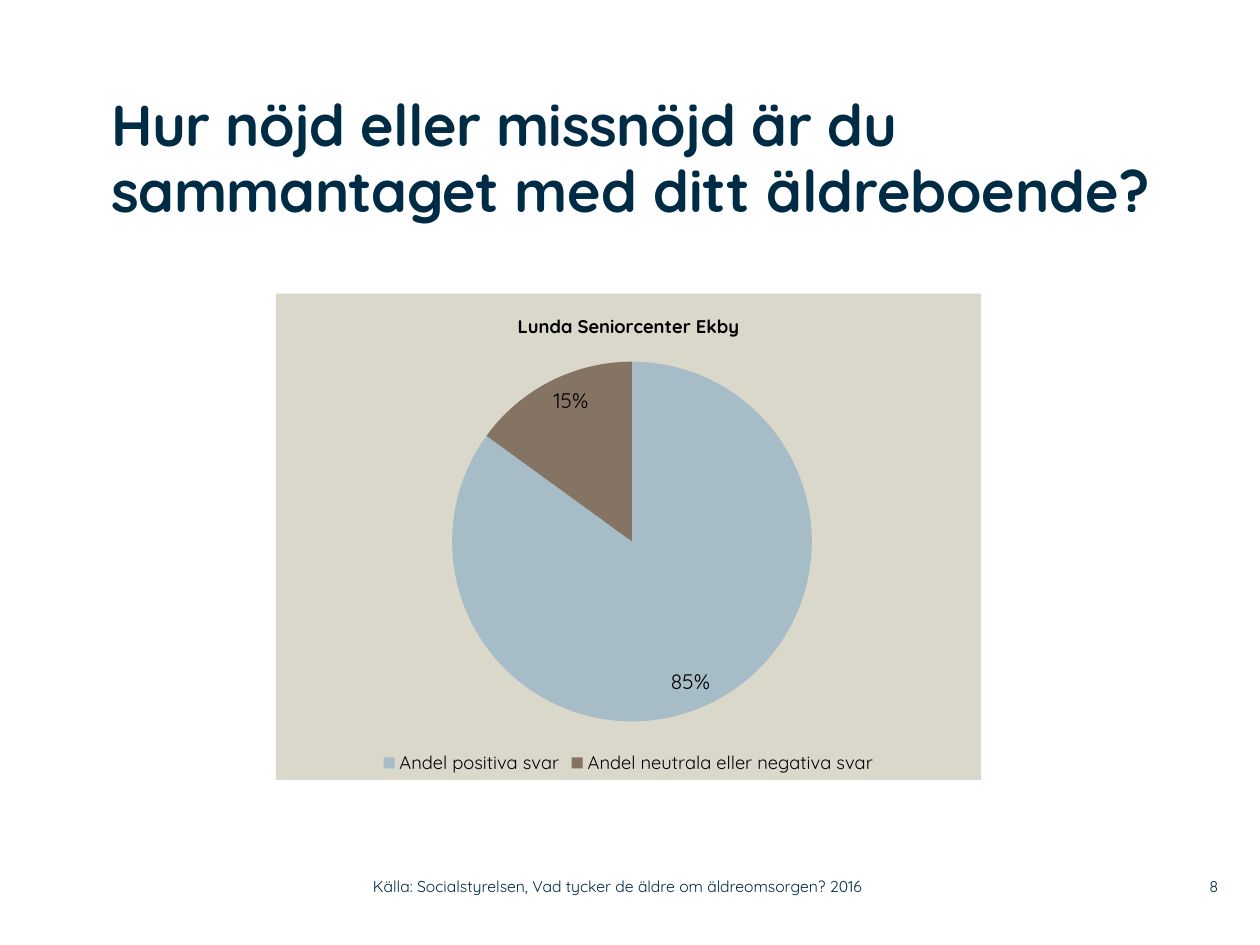
from lxml.etree import SubElement
from pptx import Presentation
from pptx.chart.data import CategoryChartData
from pptx.dml.color import RGBColor
from pptx.enum.chart import XL_CHART_TYPE as ChartType
from pptx.enum.chart import XL_LABEL_POSITION as LabelPosition
from pptx.enum.chart import XL_LEGEND_POSITION as LegendPosition
from pptx.enum.text import MSO_ANCHOR as Anchor
from pptx.enum.text import MSO_AUTO_SIZE as AutoSize
from pptx.enum.text import PP_ALIGN as Align
from pptx.oxml import parse_xml
from pptx.oxml.ns import nsdecls, qn
from pptx.util import Cm, Pt

# Content
TITLE = [("Hur nöjd eller missnöjd är du sammantaget ", -30),
         ("med ditt äldreboende?", 0)]
CHART_TITLE = "Lunda Seniorcenter Ekby"
ANSWERS = [("Andel positiva svar", 85, RGBColor(0xA6, 0xBC, 0xC6)),
           ("Andel neutrala eller negativa svar", 15, RGBColor(0x85, 0x73, 0x63))]
FOOTERS = [
    ("Källa: Socialstyrelsen, Vad tycker de äldre om äldreomsorgen? 2016",
     7.52, 11.25, Align.LEFT),
    ("8", 23.37, 1.19, Align.RIGHT),
]

# Look
FONT = "Quicksand"
NAVY = RGBColor(0x00, 0x2B, 0x45)
BLACK = RGBColor(0x00, 0x00, 0x00)
CHART_FILL = "DAD7CB"
PIE_AREA = {"x": 0.25, "y": 0.14, "w": 0.51, "h": 0.74}


def set_font(font, size, color, bold=False):
    font.name = FONT
    font.size = Pt(size)
    font.bold = bold
    font.color.rgb = color


def prepare_frame(frame, anchor):
    frame.word_wrap = True
    frame.auto_size = AutoSize.NONE
    frame.vertical_anchor = anchor
    frame.margin_left = frame.margin_right = 0
    frame.margin_top = frame.margin_bottom = 0


deck = Presentation()
deck.slide_width, deck.slide_height = Cm(25.4), Cm(19.05)
page = deck.slides.add_slide(deck.slide_layouts[5])

# Title
title = page.shapes.title
title.left, title.top, title.width, title.height = Cm(2.24), Cm(1.9), Cm(22.43), Cm(3.6)
prepare_frame(title.text_frame, Anchor.TOP)
para = title.text_frame.paragraphs[0]
para.alignment = Align.LEFT
para.line_spacing = 0.95
set_font(para.font, 33, NAVY, True)
for text, spacing in TITLE:
    span = para.add_run()
    span.text = text
    span.font.bold = True
    span.font._element.set("spc", str(spacing))

# Pie chart
names, values, colors = zip(*ANSWERS)
data = CategoryChartData()
data.categories = names
data.add_series("Series 1", values)
chart = page.shapes.add_chart(ChartType.PIE, Cm(5.56), Cm(5.92), Cm(14.22), Cm(9.8), data).chart
set_font(chart.font, 18, BLACK)

chart.has_title = True
chart.chart_title.include_in_layout = False
para = chart.chart_title.text_frame.paragraphs[0]
para.text = CHART_TITLE
set_font(para.runs[0].font, 10.5, BLACK, True)

chart.has_legend = True
chart.legend.position = LegendPosition.BOTTOM
chart.legend.include_in_layout = False
set_font(chart.legend.font, 10.5, BLACK)

plot = chart.plots[0]
plot.vary_by_categories = True
for index, color in enumerate(colors):
    slice_fill = plot.series[0].points[index].format.fill
    slice_fill.solid()
    slice_fill.fore_color.rgb = color

labels = plot.series[0].data_labels
labels.show_percentage = True
labels.show_value = False
labels.number_format, labels.number_format_is_linked = "0%", False
labels.position = LabelPosition.INSIDE_END
set_font(labels.font, 12, BLACK)

# Chart background and pie placement
space = chart._chartSpace
space.find(qn("c:chart")).addnext(parse_xml(
    f'<c:spPr {nsdecls("c", "a")}><a:solidFill><a:srgbClr val="{CHART_FILL}"/>'
    '</a:solidFill><a:ln><a:noFill/></a:ln></c:spPr>'))
plot_area = space.find(qn("c:chart")).find(qn("c:plotArea"))
layout = plot_area.find(qn("c:layout"))
if layout is None:
    layout = parse_xml(f'<c:layout {nsdecls("c")}/>')
    plot_area.insert(0, layout)
manual = SubElement(layout, qn("c:manualLayout"))
settings = {"layoutTarget": "inner", "xMode": "edge", "yMode": "edge", **PIE_AREA}
for name, value in settings.items():
    SubElement(manual, qn(f"c:{name}")).set("val", str(value))

# Source and page number
for text, left, width, alignment in FOOTERS:
    box = page.shapes.add_textbox(Cm(left), Cm(17.5), Cm(width), Cm(0.74))
    prepare_frame(box.text_frame, Anchor.MIDDLE)
    para = box.text_frame.paragraphs[0]
    para.text = text
    para.alignment = alignment
    set_font(para.font, 9, NAVY)

deck.save("out.pptx")
